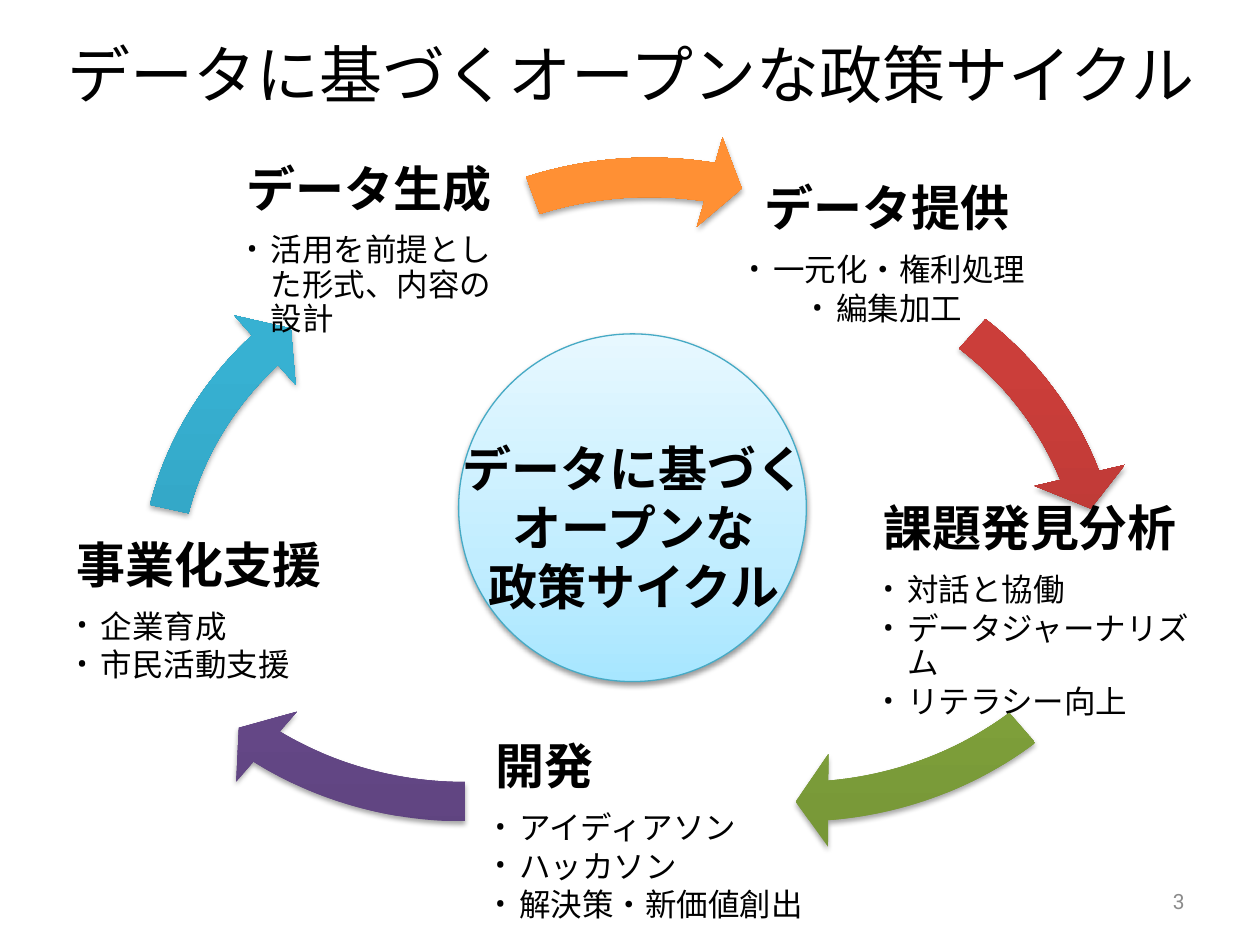
import dataclasses
import typing

import pptx
import pptx.dml.color
import pptx.enum.shapes
import pptx.enum.text
import pptx.oxml
import pptx.oxml.ns
import pptx.util

COLUMNS, ROWS = 100, 75
FONT = "Roboto"
BLACK = "000000"
ARROW_SIZE = (64.3, 60.2)
ALIGN = pptx.enum.text.PP_ALIGN
ANCHOR = pptx.enum.text.MSO_ANCHOR
SHAPE = pptx.enum.shapes.MSO_SHAPE

deck = pptx.Presentation()
deck.slide_width = pptx.util.Inches(10)
deck.slide_height = pptx.util.Inches(7.5)
page = deck.slides.add_slide(deck.slide_layouts[6])


class Area(typing.NamedTuple):
    """A rectangle in grid columns and rows."""

    column: float
    row: float
    width: float
    height: float


@dataclasses.dataclass
class Stage:
    """One step of the cycle: a heading with bulleted activities."""

    area: Area
    heading: str
    activities: list[str]
    align: typing.Any = ALIGN.LEFT
    left_inset: float = 0.04


@dataclasses.dataclass
class Arrow:
    """A curved arrow sweeping between two angles in degrees."""

    column: float
    row: float
    start: float
    end: float
    colors: tuple[str, str, str]


def rgb(value: str) -> pptx.dml.color.RGBColor:
    """Turn a hex string into a colour."""
    return pptx.dml.color.RGBColor.from_string(value)


def place(area: Area) -> tuple[int, int, int, int]:
    """Convert a grid area to slide lengths."""
    across, down = deck.slide_width / COLUMNS, deck.slide_height / ROWS
    return (round(area.column * across), round(area.row * down),
            round(area.width * across), round(area.height * down))


def element(markup: str) -> typing.Any:
    """Parse one drawing element, given its tag, attributes and content."""
    tag, rest = markup[1:].split(" ", 1)
    return pptx.oxml.parse_xml(f"<{tag} {pptx.oxml.ns.nsdecls('a')} {rest}")


def add_box(area: Area, anchor: typing.Any) -> typing.Any:
    """Add a wrapping text box and return its text frame."""
    frame = page.shapes.add_textbox(*place(area)).text_frame
    frame.word_wrap = True
    frame.vertical_anchor = anchor
    return frame


def add_span(para: typing.Any, text: str, size: float, bold: bool = False,
             color: str = BLACK) -> None:
    """Add one formatted run to a paragraph."""
    span = para.add_run()
    span.text = text
    span.font.name = FONT
    span.font.size = pptx.util.Pt(size)
    span.font.bold = bold
    span.font.color.rgb = rgb(color)
    span._r.get_or_add_rPr().append(element(f'<a:ea typeface="{FONT}"/>'))


def add_line(area: Area, text: str, size: float, align: typing.Any, color: str = BLACK) -> None:
    """Add a single line of text, centred vertically."""
    para = add_box(area, ANCHOR.MIDDLE).paragraphs[0]
    para.alignment = align
    add_span(para, text, size, color=color)


def style(shape: typing.Any, stops: list[tuple[int, str]], alpha: int, distance: float) -> None:
    """Give a shape an upward gradient and a soft shadow below."""
    shape.fill.gradient()
    shape.fill.gradient_angle = 90
    properties = shape._element.spPr
    stop_list = properties.find(".//" + pptx.oxml.ns.qn("a:gsLst"))
    for stop in list(stop_list):
        stop_list.remove(stop)
    for position, color in stops:
        stop_list.append(element(
            f'<a:gs pos="{position * 1000}"><a:srgbClr val="{color}"/></a:gs>'))
    shape.shadow.inherit = False
    properties.find(pptx.oxml.ns.qn("a:effectLst")).append(element(
        f'<a:outerShdw blurRad="{pptx.util.Pt(3.1)}" dist="{pptx.util.Pt(distance)}" '
        f'dir="5400000" rotWithShape="0"><a:srgbClr val="{BLACK}">'
        f'<a:alpha val="{alpha * 1000}"/></a:srgbClr></a:outerShdw>'))


def add_stage(stage: Stage) -> None:
    """Draw a stage heading and its bullets."""
    frame = add_box(stage.area, ANCHOR.MIDDLE)
    frame.margin_left = pptx.util.Inches(stage.left_inset)
    frame.margin_right = frame.margin_top = frame.margin_bottom = pptx.util.Inches(0.04)
    para = frame.paragraphs[0]
    para.alignment = stage.align
    para.line_spacing = 0.9
    para.space_after = pptx.util.Pt(28 * 0.35)
    add_span(para, stage.heading, 28, bold=True)
    for activity in stage.activities:
        para = frame.add_paragraph()
        para.level = 1
        para.alignment = stage.align
        properties = para._p.get_or_add_pPr()
        indent = pptx.util.Inches(0.19)
        properties.set("marL", str(indent))
        properties.set("indent", str(-indent))
        properties.append(element(f'<a:buFont typeface="{FONT}"/>'))
        properties.append(element('<a:buChar char="•"/>'))
        para.line_spacing = 0.9
        para.space_after = pptx.util.Pt(18 * 0.15)
        add_span(para, activity, 18)


def add_arrow(arrow: Arrow) -> None:
    """Draw one curved arrow of the cycle."""
    shape = page.shapes.add_shape(
        SHAPE.CIRCULAR_ARROW, *place(Area(arrow.column, arrow.row, *ARROW_SIZE)))
    values = (0.052, 5.6 * 0.6, arrow.end * 0.6, arrow.start * 0.6, 0.061)
    for index, value in enumerate(values):
        shape.adjustments[index] = value
    style(shape, list(zip((0, 80, 100), arrow.colors)), 35, 1.8)
    shape.line.fill.background()


def add_hub() -> None:
    """Draw the central circle and its label."""
    circle = page.shapes.add_shape(SHAPE.OVAL, *place(Area(36.4, 26.5, 27.6, 27.6)))
    style(circle, [(0, "A7E6FF"), (35, "C1EDFF"), (100, "E7F8FF")], 38, 1.6)
    circle.line.color.rgb = rgb("46AAC5")
    circle.line.width = pptx.util.Pt(0.75)
    frame = add_box(Area(32.7, 34.3, 35.2, 15.1), ANCHOR.TOP)
    first, second = frame.paragraphs[0], frame.add_paragraph()
    first.alignment = second.alignment = ALIGN.CENTER
    add_span(first, "データに基づく", 28, bold=True)
    add_span(second, "オープンな", 28, bold=True)
    second.add_line_break()
    add_span(second, "政策サイクル", 28, bold=True)


CYCLE = [
    (Stage(Area(56.9, 12.7, 27, 15.2), "データ提供",
           ["一元化・権利処理", "編集加工"], align=ALIGN.CENTER),
     Arrow(26.8, 16.7, 311.91, 341.27, ("9C2F2D", "CB3E3A", "CE3B37"))),
    (Stage(Area(69.7, 41, 26, 15.2), "課題発見分析",
           ["対話と協働", "データジャーナリズム", "リテラシー向上"]),
     Arrow(31.1, 7.1, 48.98, 84.61, ("779737", "9BC348", "9DC746"))),
    (Stage(Area(36.9, 58.5, 28.5, 15.2), "開発",
           ["アイディアソン", "ハッカソン", "解決策・新価値創出"], left_inset=0.24),
     Arrow(4.7, 7.1, 89.8, 125.42, ("5F4480", "7B58A6", "7C57A8"))),
    (Stage(Area(5.7, 41, 23.5, 15.2), "事業化支援", ["企業育成", "市民活動支援"]),
     Arrow(9, 16.4, 192.42, 222.93, ("2A88A2", "37B1D2", "34B4D6"))),
    (Stage(Area(19.2, 12.3, 21.9, 15.2), "データ生成",
           ["活用を前提とした形式、内容の設計"]),
     Arrow(19.4, 10.4, 249.7, 280.4, ("CC6E20", "FF9034", "FF9136"))),
]

add_line(Area(2.8, 2.2, 94.5, 7.2), "データに基づくオープンな政策サイクル", 36, ALIGN.CENTER)
for step, link in CYCLE:
    add_stage(step)
    add_arrow(link)
add_hub()
add_line(Area(71.7, 69.5, 23.3, 4), "3", 12, ALIGN.RIGHT, "8C8C8C")
deck.save("out.pptx")
